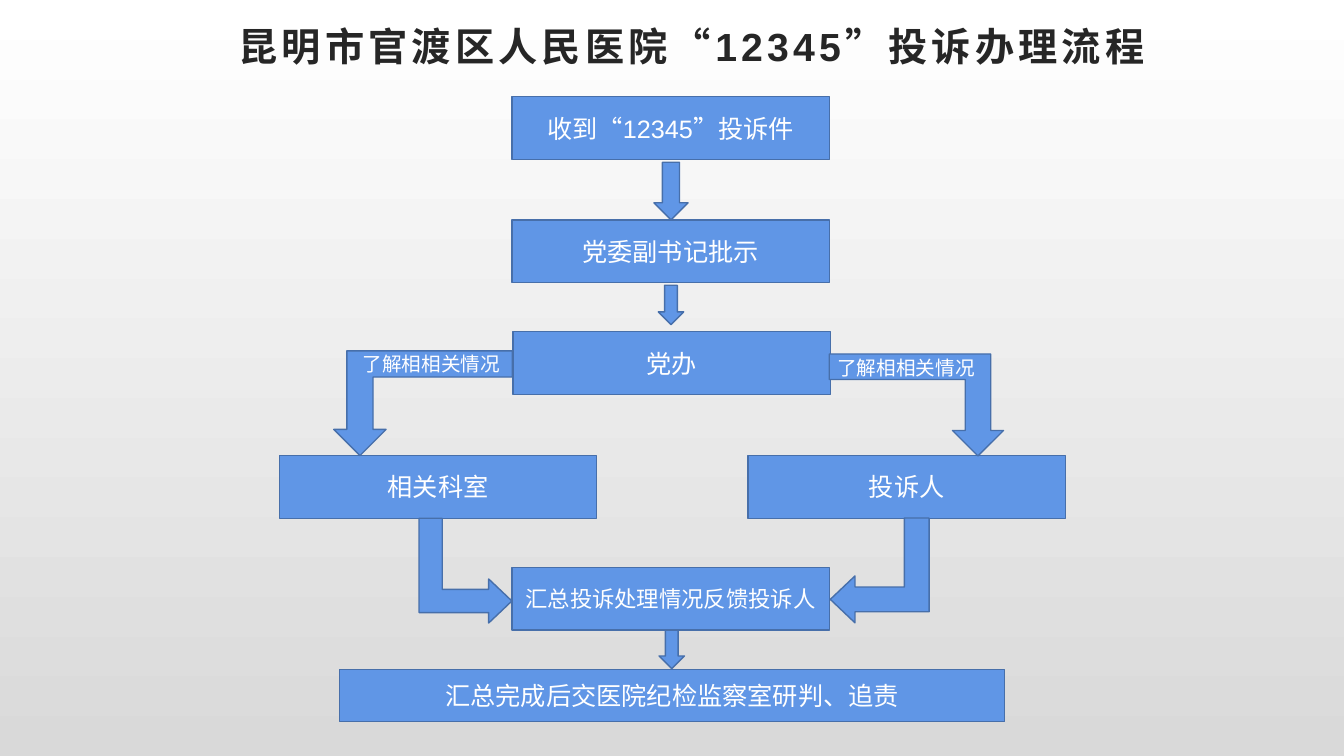
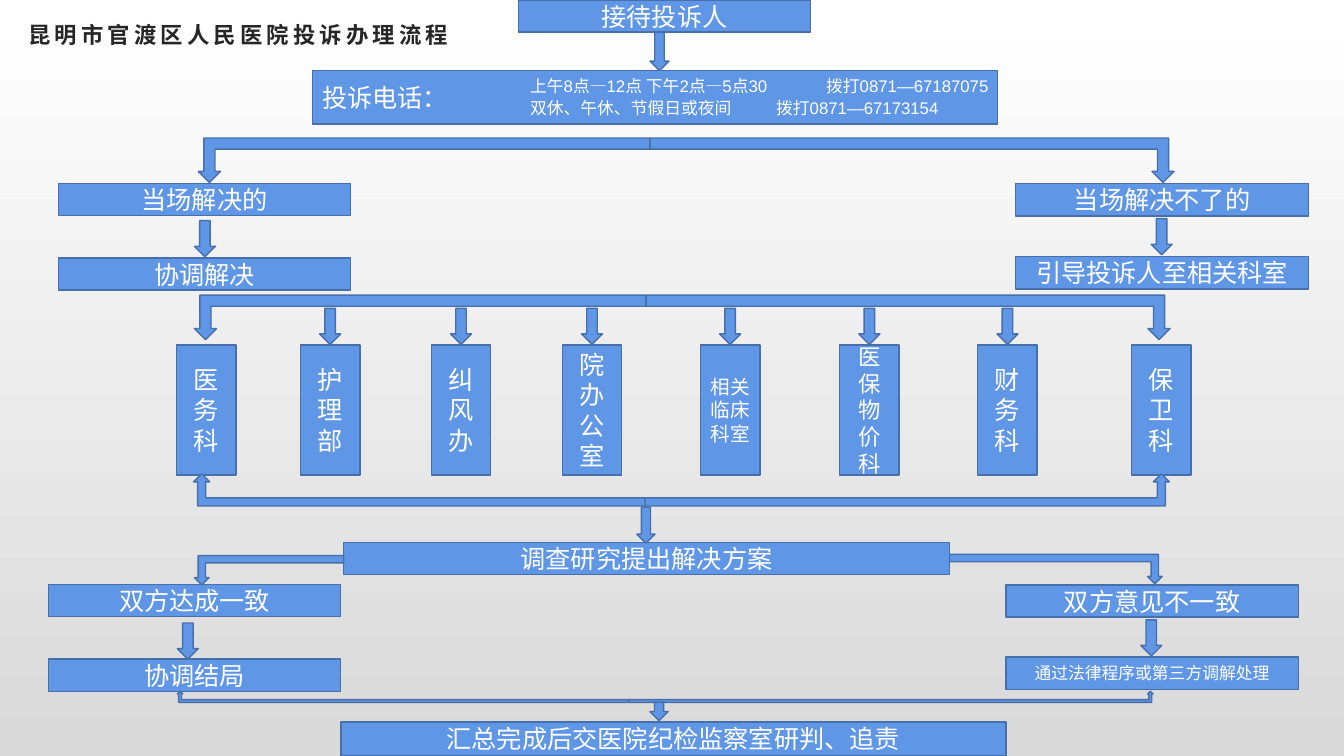
from lxml import etree
from pptx import Presentation
from pptx.dml.color import RGBColor
from pptx.enum.lang import MSO_LANGUAGE_ID
from pptx.enum.shapes import MSO_SHAPE
from pptx.enum.text import MSO_ANCHOR, PP_ALIGN
from pptx.oxml.ns import qn
from pptx.util import Cm, Pt

BOX, DOWN, BENT = MSO_SHAPE.RECTANGLE, MSO_SHAPE.DOWN_ARROW, MSO_SHAPE.BENT_UP_ARROW
LEFT, CENTER = PP_ALIGN.LEFT, PP_ALIGN.CENTER
TOP, MIDDLE, BOTTOM = MSO_ANCHOR.TOP, MSO_ANCHOR.MIDDLE, MSO_ANCHOR.BOTTOM
CHINESE = MSO_LANGUAGE_ID.SIMPLIFIED_CHINESE

WHITE = RGBColor(0xFF, 0xFF, 0xFF)
GRAY = RGBColor(0xD9, 0xD9, 0xD9)
INK = RGBColor(0x26, 0x26, 0x26)
BLUE = RGBColor(0x60, 0x96, 0xE6)
BLUE_EDGE = RGBColor(0x47, 0x6F, 0xAA)
FONT = "Arial"
INSETS = {"margin_left": Cm(0.25), "margin_right": Cm(0.25),
          "margin_top": Cm(0.13), "margin_bottom": Cm(0.13)}

# Content; all lengths in cm
CLOSING = "汇总完成后交医院纪检监察室研判、追责"

# Hotline flow: steps are text, left, top, font size
HOTLINE_TITLE = ("昆明市官渡区人民医院“12345”投诉办理流程", (3.81, 0.28, 27.23, 1.6), 28)
STEP_SIZE = (8, 1.58)
HOTLINE_STEPS = [
    ("收到“12345”投诉件", 12.9, 2.44, 18),
    ("党委副书记批示", 12.9, 5.54, 18),
    ("党办", 12.93, 8.36, 18),
    ("相关科室", 7.04, 11.48, 18),
    ("投诉人", 18.85, 11.48, 18),
    ("汇总投诉处理情况反馈投诉人", 12.9, 14.3, 16),
]
HOTLINE_CLOSING = (8.56, 16.87, 16.76, 1.32)
HOTLINE_ARROWS = [(16.48, 4.09, 0.86, 1.45), (16.59, 7.19, 0.64, 0.99),
                  (16.61, 15.88, 0.64, 0.97)]
# Elbows: place, rotation, flips, adjustments
RETURN_ADJ = (0.25, 0.237, 0.25)
HOTLINE_ELBOWS = [
    ((8.41, 8.84, 4.5, 2.64), 180, "", ()),
    ((20.9, 8.92, 4.39, 2.57), 180, "H", ()),
    ((20.85, 13.13, 2.64, 2.49), 90, "V", RETURN_ADJ),
    ((10.41, 13.21, 2.64, 2.34), 90, "", RETURN_ADJ),
]
INQUIRY = "了解相相关情况"
INQUIRY_SPOTS = [(8.89, 8.74), (20.85, 8.84)]

# Reception flow
RECEPTION_TITLE = ("昆明市官渡区人民医院投诉办理流程", (0.13, 0.33, 11.76, 1.02), 16)
BAR_SIZE = (7.37, 0.81)
RECEPTION_BARS = [
    ("接待投诉人", 13.06, 0, 18),
    ("当场解决的", 1.47, 4.62, 18),
    ("当场解决不了的", 25.6, 4.63, 18),
    ("协调解决", 1.47, 6.5, 18),
    ("引导投诉人至相关科室", 25.6, 6.47, 18),
    ("双方达成一致", 1.22, 14.73, 18),
    ("双方意见不一致", 25.35, 14.74, 18),
    ("协调结局", 1.22, 16.61, 18),
    ("通过法律程序或第三方调解处理", 25.35, 16.56, 12),
]
WIDE_BARS = [
    ("调查研究提出解决方案", (8.66, 13.67, 15.27, 0.81)),
    (CLOSING, (8.59, 18.19, 16.76, 0.86)),
]
PHONE = ("投诉电话：", (7.87, 1.78, 17.27, 1.35))
PHONE_ROWS = [  # text, top, tab stop
    ("上午8点—12点 下午2点—5点30\t拨打0871—67187075", 1.78, 7.46),
    ("双休、午休、节假日或夜间\t拨打0871—67173154", 2.34, 6.2),
]
DEPARTMENTS = [  # name, left, font size
    ("医务科", 4.45, 18), ("护理部", 7.57, 18), ("纠风办", 10.87, 18),
    ("院办公室", 14.17, 18), ("相关临床科室", 17.65, 14), ("医保物价科", 21.16, 16),
    ("财务科", 24.64, 18), ("保卫科", 28.52, 18),
]
DEPARTMENT_TOP, DEPARTMENT_SIZE = 8.69, (1.5, 3.28)
SHORT_ARROW = (0.53, 0.91)
SHORT_ARROW_SPOTS = [(4.9, 5.56), (29.01, 5.51), (4.47, 15.7), (28.75, 15.62)]
RECEPTION_ARROWS = [(16.38, 0.81, 0.48, 0.97), (16.05, 12.78, 0.46, 0.91),
                    (16.38, 17.7, 0.46, 0.46)]
# Brackets: middle, top, height, vertical flip
BRACKET_ARMS = (11.38, 13.21)
BRACKETS = [(16.38, 3.48, 1.12, "V"), (16.28, 7.44, 1.12, "V"),
            (16.26, 11.94, 0.81, ""), (15.85, 17.42, 0.28, "")]
RECEPTION_ELBOWS = [((4.9, 14, 3.76, 0.74), 180, "", ()),
                    ((23.93, 13.97, 5.36, 0.74), 180, "H", ())]


def apply(target, values):
    for name, value in values.items():
        setattr(target, name, value)


def write(frame, text, size, color=WHITE, align=CENTER, anchor=MIDDLE,
          bold=False, tab=None):
    apply(frame, {"word_wrap": True, "vertical_anchor": anchor, **INSETS})
    paragraph = frame.paragraphs[0]
    paragraph.alignment = align
    if tab:
        stops = etree.SubElement(paragraph._p.get_or_add_pPr(), qn("a:tabLst"))
        etree.SubElement(stops, qn("a:tab"), pos=str(Cm(tab)), algn="l")
    run = paragraph.add_run()
    run.text = text
    apply(run.font, {"name": FONT, "size": Pt(size), "bold": bold,
                     "language_id": CHINESE})
    run.font.color.rgb = color
    return run


def add_block(slide, kind, place):
    block = slide.shapes.add_shape(kind, *map(Cm, place))
    block.shadow.inherit = False
    block.fill.solid()
    block.fill.fore_color.rgb = BLUE
    block.line.color.rgb = BLUE_EDGE
    block.line.width = Pt(1)
    return block


def add_step(slide, text, place, size=18, align=CENTER):
    write(add_block(slide, BOX, place).text_frame, text, size, align=align)


def add_elbow(slide, place, rotation=0, flips="", adjustments=()):
    elbow = add_block(slide, BENT, place)
    elbow.rotation = rotation
    for axis in flips:
        elbow.element.spPr.xfrm.set("flip" + axis, "1")
    for index, value in enumerate(adjustments):
        elbow.adjustments[index] = value


def add_label(slide, text, place, size, tab=None):
    label = slide.shapes.add_textbox(*map(Cm, place))
    write(label.text_frame, text, size, align=LEFT, anchor=TOP, tab=tab)


def add_titled_slide(prs, text, place, size):
    slide = prs.slides.add_slide(prs.slide_layouts[5])
    title = slide.shapes.title
    apply(title, dict(zip(("left", "top", "width", "height"), map(Cm, place))))
    run = write(title.text_frame, text, size, INK, anchor=BOTTOM, bold=True)
    run.font._element.set("spc", "300")
    return slide


def build_hotline(prs):
    slide = add_titled_slide(prs, *HOTLINE_TITLE)
    for text, left, top, size in HOTLINE_STEPS:
        add_step(slide, text, (left, top, *STEP_SIZE), size)
    for place in HOTLINE_ARROWS:
        add_block(slide, DOWN, place)
    for elbow in HOTLINE_ELBOWS:
        add_elbow(slide, *elbow)
    for spot in INQUIRY_SPOTS:
        add_label(slide, INQUIRY, (*spot, 4.01, 0.86), 14)
    add_step(slide, CLOSING, HOTLINE_CLOSING)


def build_reception(prs):
    slide = add_titled_slide(prs, *RECEPTION_TITLE)
    for text, left, top, size in RECEPTION_BARS:
        add_step(slide, text, (left, top, *BAR_SIZE), size)
    for text, place in WIDE_BARS:
        add_step(slide, text, place)

    # Telephone numbers
    add_step(slide, *PHONE, align=LEFT)
    for text, top, tab in PHONE_ROWS:
        add_label(slide, text, (13.11, top, 13.67, 0.76), 12, tab)

    # Departments; the bracket points at the two outer ones
    for name, left, size in DEPARTMENTS:
        add_step(slide, name, (left, DEPARTMENT_TOP, *DEPARTMENT_SIZE), size)
    inset = (DEPARTMENT_SIZE[0] - SHORT_ARROW[0]) / 2
    inner_spots = [(left + inset, 7.77) for _, left, _ in DEPARTMENTS[1:-1]]

    # Arrows
    for spot in SHORT_ARROW_SPOTS + inner_spots:
        add_block(slide, DOWN, (*spot, *SHORT_ARROW))
    left_arm, right_arm = BRACKET_ARMS
    for middle, top, height, flip in BRACKETS:
        add_elbow(slide, (middle, top, right_arm, height), flips=flip)
        add_elbow(slide, (middle - left_arm, top, left_arm, height), flips="H" + flip)
    for elbow in RECEPTION_ELBOWS:
        add_elbow(slide, *elbow)
    for place in RECEPTION_ARROWS:
        add_block(slide, DOWN, place)


def main():
    prs = Presentation()
    prs.slide_width, prs.slide_height = Cm(33.87), Cm(19.05)

    # Shared background, white down to gray
    backdrop = prs.slide_master.background.fill
    backdrop.gradient()
    backdrop.gradient_angle = 270
    for stop, color in zip(backdrop.gradient_stops, (WHITE, GRAY)):
        stop.color.rgb = color

    build_hotline(prs)
    build_reception(prs)
    prs.save("out.pptx")


if __name__ == "__main__":
    main()
